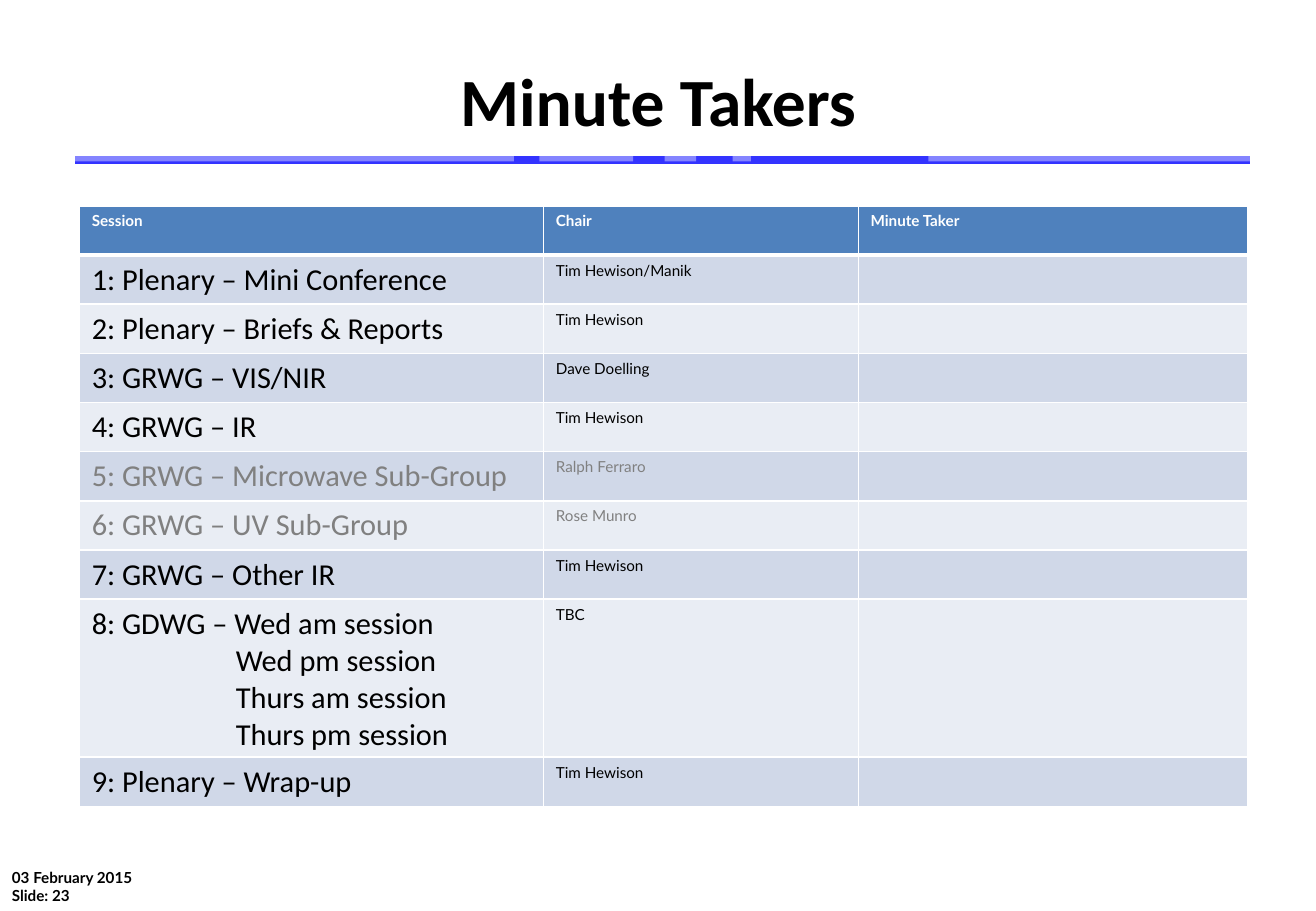
"""Build the Minute Takers slide."""
from lxml import etree
from pptx import Presentation
from pptx.dml.color import RGBColor
from pptx.enum.shapes import MSO_CONNECTOR, MSO_SHAPE
from pptx.enum.text import MSO_ANCHOR, PP_ALIGN
from pptx.oxml.ns import qn
from pptx.util import Pt

PX = 4572
BLACK = RGBColor(0x00, 0x00, 0x00)
WHITE = RGBColor(0xFF, 0xFF, 0xFF)
GREY = RGBColor(0x80, 0x80, 0x80)
RULE_BLUE = RGBColor(0x33, 0x33, 0xFF)
HEADER_BLUE = RGBColor(0x4F, 0x81, 0xBD)
BANDS = (RGBColor(0xD0, 0xD8, 0xE8), RGBColor(0xE9, 0xED, 0xF4))

TITLE = "Minute Takers"
FOOTER = "03 February 2015\nSlide: 23"
HEADERS = ("Session", "Chair", "Minute Taker")
SESSIONS = [
    ("1: Plenary – Mini Conference", "Tim Hewison/Manik", BLACK),
    ("2: Plenary – Briefs & Reports", "Tim Hewison", BLACK),
    ("3: GRWG – VIS/NIR", "Dave Doelling", BLACK),
    ("4: GRWG – IR", "Tim Hewison", BLACK),
    ("5: GRWG – Microwave Sub-Group", "Ralph Ferraro", GREY),
    ("6: GRWG – UV Sub-Group", "Rose Munro", GREY),
    ("7: GRWG – Other IR", "Tim Hewison", BLACK),
    ("8: GDWG – Wed am session\nWed pm session\nThurs am session\nThurs pm session",
     "TBC", BLACK),
    ("9: Plenary – Wrap-up", "Tim Hewison", BLACK),
]
COL_WIDTHS = (764, 518, 640)
ROW_HEIGHT, TALL_ROW_HEIGHT = 81, 259
SESSION_INDENT = 237
VEILS = [(2, 844), (888, 154), (1094, 52), (1206, 30), (1528, 640)]
VEIL_TOP, VEIL_HEIGHT, VEIL_ALPHA = 238, 28, 40


def box(*px):
    return [v * PX for v in px]


def write(tf, text, font, size, color, bold=False, align=PP_ALIGN.LEFT):
    tf.text = text
    for p in tf.paragraphs:
        p.alignment = align
        for r in p.runs:
            r.font.name, r.font.size, r.font.bold = font, Pt(size), bold
            r.font.color.rgb = color


def add_text(s, area, *style, anchor=MSO_ANCHOR.TOP, **options):
    tf = s.shapes.add_textbox(*box(*area)).text_frame
    tf.word_wrap = True
    tf.vertical_anchor = anchor
    write(tf, *style, **options)


def set_borders(cell, top, bottom):
    tcPr = cell._tc.get_or_add_tcPr()
    sides = (("L", 1), ("R", 1), ("T", top), ("B", bottom))
    for i, (side, width) in enumerate(sides):
        ln = etree.Element(qn(f"a:ln{side}"), w=str(Pt(width)))
        fill = etree.SubElement(ln, qn("a:solidFill"))
        etree.SubElement(fill, qn("a:srgbClr"), val=str(WHITE))
        tcPr.insert(i, ln)


def add_rule(s):
    line = s.shapes.add_connector(MSO_CONNECTOR.STRAIGHT, *box(124, 264, 2058, 264))
    line.line.color.rgb = RULE_BLUE
    line.line.width = Pt(4.5)
    etree.SubElement(line._element.spPr, qn("a:effectLst"))
    for left, width in VEILS:
        sp = s.shapes.add_shape(MSO_SHAPE.RECTANGLE,
                                *box(left, VEIL_TOP, width, VEIL_HEIGHT))
        sp.shadow.inherit = False
        sp.line.fill.background()
        sp.fill.solid()
        sp.fill.fore_color.rgb = WHITE
        clr = sp._element.spPr.find(".//" + qn("a:srgbClr"))
        etree.SubElement(clr, qn("a:alpha"), val=str(VEIL_ALPHA * 1000))


def add_sessions(s):
    heights = [TALL_ROW_HEIGHT if "\n" in row[0] else ROW_HEIGHT for row in SESSIONS]
    heights.insert(0, ROW_HEIGHT)
    table = s.shapes.add_table(len(heights), len(COL_WIDTHS),
                               *box(131, 339, sum(COL_WIDTHS), sum(heights))).table
    for col, width in zip(table.columns, COL_WIDTHS):
        col.width = width * PX
    for row, height in zip(table.rows, heights):
        row.height = height * PX
    for c, text in enumerate(HEADERS):
        write(table.cell(0, c).text_frame, text, "Lato", 9, WHITE, bold=True)
    for i, (session, chair, color) in enumerate(SESSIONS, 1):
        tf = table.cell(i, 0).text_frame
        write(tf, session, "Calibri", 18, color)
        for p in tf.paragraphs[1:]:
            p._p.get_or_add_pPr().set("marL", str(SESSION_INDENT * PX))
        write(table.cell(i, 1).text_frame, chair, "Lato", 9, color)
    for i, row in enumerate(table.rows):
        for cell in row.cells:
            cell.fill.solid()
            cell.fill.fore_color.rgb = BANDS[(i - 1) % 2] if i else HEADER_BLUE
            set_borders(cell, 3 if i == 1 else 1, 3 if i == 0 else 1)


def main():
    prs = Presentation()
    prs.slide_width, prs.slide_height = box(2166, 1500)
    s = prs.slides.add_slide(prs.slide_layouts[6])
    add_text(s, (0, 1420, 1372, 80), FOOTER, "Lato", 9, BLACK, bold=True)
    add_rule(s)
    add_text(s, (108, 60, 1950, 208), TITLE, "Calibri", 40, BLACK, bold=True,
             align=PP_ALIGN.CENTER, anchor=MSO_ANCHOR.MIDDLE)
    add_sessions(s)
    prs.save("out.pptx")


if __name__ == "__main__":
    main()
